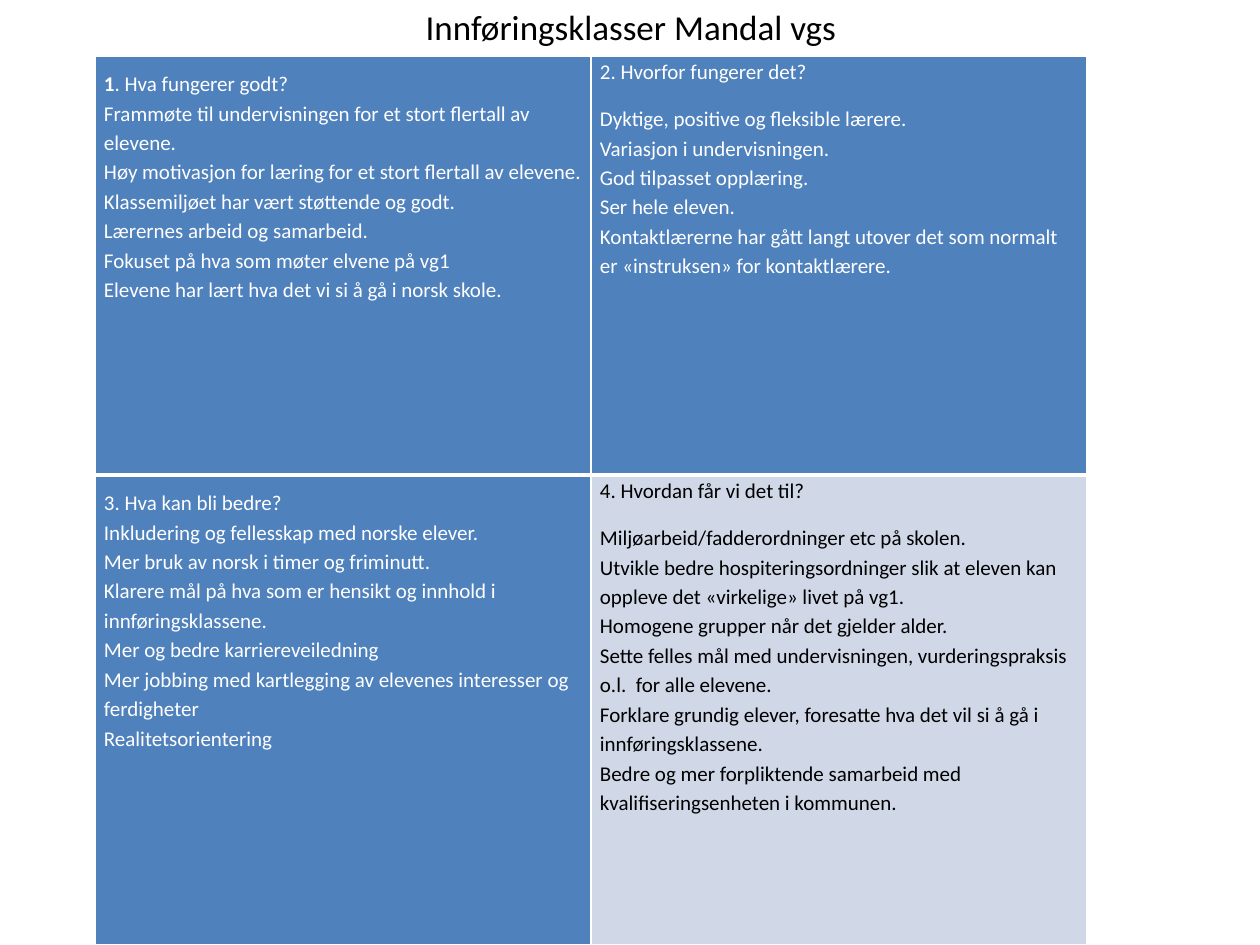
from lxml import etree
from pptx import Presentation
from pptx.dml.color import RGBColor
from pptx.enum.text import MSO_ANCHOR, PP_ALIGN
from pptx.oxml.ns import qn
from pptx.util import Emu, Pt

CENTER = PP_ALIGN.CENTER
MIDDLE = MSO_ANCHOR.MIDDLE
TOP = MSO_ANCHOR.TOP

PX_PER_INCH = 126
COLORS = {"white": "FFFFFF", "black": "000000", "blue": "4F81BD", "pale": "D0D8E8"}


def px(length):
    return Emu(round(length * 914400 / PX_PER_INCH))


class SlideBuilder:
    """Holds the current slide and its text style."""

    font = "Calibri"
    title_size = 20
    body_size = 12
    line_spacing = 1.15

    def __init__(self, slide):
        self.slide = slide

    def add_run(self, paragraph, text, size, color, bold=False):
        run = paragraph.add_run()
        run.text = text
        run.font.name = self.font
        run.font.size = Pt(size)
        run.font.bold = bold
        run.font.color.rgb = RGBColor.from_string(COLORS[color])

    def title(self, text, left, top, width, height):
        heading = self.slide.shapes.title
        heading.left, heading.top = px(left), px(top)
        heading.width, heading.height = px(width), px(height)
        frame = heading.text_frame
        frame.vertical_anchor = MIDDLE
        paragraph = frame.paragraphs[0]
        paragraph.alignment = CENTER
        self.add_run(paragraph, text, self.title_size, "black")

    def borders(self, cell, bottom_width):
        properties = cell._tc.get_or_add_tcPr()
        for side, width in (("L", 1), ("R", 1), ("T", 1), ("B", bottom_width)):
            line = etree.SubElement(properties, qn(f"a:ln{side}"), w=str(Pt(width)))
            fill = etree.SubElement(line, qn("a:solidFill"))
            etree.SubElement(fill, qn("a:srgbClr"), val=COLORS["white"])

    def cell(self, cell, content, bottom_width):
        self.borders(cell, bottom_width)
        cell.fill.solid()
        cell.fill.fore_color.rgb = RGBColor.from_string(COLORS[content["fill"]])
        cell.margin_left = cell.margin_right = px(9)
        cell.margin_top, cell.margin_bottom = px(content["inset"]), px(0)
        cell.vertical_anchor = TOP
        for index, lines in enumerate(content["paragraphs"]):
            frame = cell.text_frame
            paragraph = frame.add_paragraph() if index else frame.paragraphs[0]
            paragraph.line_spacing = self.line_spacing
            paragraph.space_after = Pt(content["after"])
            for position, line in enumerate(lines):
                if position:
                    paragraph.add_line_break()
                runs = line if isinstance(line, tuple) else (("", line),)
                for weight, text in runs:
                    self.add_run(paragraph, text, self.body_size,
                                 content["text"], weight == "bold")

    def table(self, rows, left, top, column_width, row_heights):
        columns = len(rows[0])
        table = self.slide.shapes.add_table(
            len(rows), columns, px(left), px(top),
            px(column_width * columns), px(sum(row_heights))).table
        table.first_row = table.horz_banding = False
        for column in table.columns:
            column.width = px(column_width)
        for r, (contents, height) in enumerate(zip(rows, row_heights)):
            table.rows[r].height = px(height)
            for c, content in enumerate(contents):
                self.cell(table.cell(r, c), content, 1 if r else 3)


def quadrant(paragraphs, inset=0, after=10, fill="blue", text="white"):
    return {"paragraphs": paragraphs, "inset": inset, "after": after,
            "fill": fill, "text": text}


WORKS_WELL = quadrant([
    [(("bold", "1"), ("", ". Hva fungerer godt?"))],
    ["Frammøte til undervisningen for et stort flertall av elevene."],
    ["Høy motivasjon for læring for et stort flertall av elevene."],
    ["Klassemiljøet har vært støttende og godt."],
    ["Lærernes arbeid og samarbeid."],
    ["Fokuset på hva som møter elvene på vg1"],
    ["Elevene har lært hva det vi si å gå i norsk skole."],
], inset=12, after=0)

WHY_IT_WORKS = quadrant([
    ["2. Hvorfor fungerer det?"],
    ["Dyktige, positive og fleksible lærere.",
     "Variasjon i undervisningen.",
     "God tilpasset opplæring.",
     "Ser hele eleven.",
     "Kontaktlærerne har gått langt utover det som normalt er «instruksen» for kontaktlærere."],
])

CAN_IMPROVE = quadrant([
    ["3. Hva kan bli bedre?",
     "Inkludering og fellesskap med norske elever.",
     "Mer bruk av norsk i timer og friminutt.",
     "Klarere mål på hva som er hensikt og innhold i innføringsklassene.",
     "Mer og bedre karriereveiledning",
     "Mer jobbing med kartlegging av elevenes interesser og ferdigheter",
     "Realitetsorientering"],
], inset=12)

HOW_TO_ACHIEVE = quadrant([
    ["4. Hvordan får vi det til?"],
    ["Miljøarbeid/fadderordninger etc på skolen.",
     "Utvikle bedre hospiteringsordninger slik at eleven kan oppleve det «virkelige» livet på vg1.",
     "Homogene grupper når det gjelder alder.",
     "Sette felles mål med undervisningen, vurderingspraksis o.l.  for alle elevene.",
     "Forklare grundig elever, foresatte hva det vil si å gå i innføringsklassene.",
     "Bedre og mer forpliktende samarbeid med kvalifiseringsenheten i kommunen."],
], fill="pale", text="black")


def main():
    presentation = Presentation()
    presentation.slide_width, presentation.slide_height = px(1260), px(945)
    title_only = presentation.slide_layouts[5]
    builder = SlideBuilder(presentation.slides.add_slide(title_only))
    builder.table([[WORKS_WELL, WHY_IT_WORKS], [CAN_IMPROVE, HOW_TO_ACHIEVE]],
                  left=95, top=56, column_width=496, row_heights=[419, 470])
    builder.title("Innføringsklasser Mandal vgs", 64, -53, 1134, 158)
    presentation.save("out.pptx")


if __name__ == "__main__":
    main()
